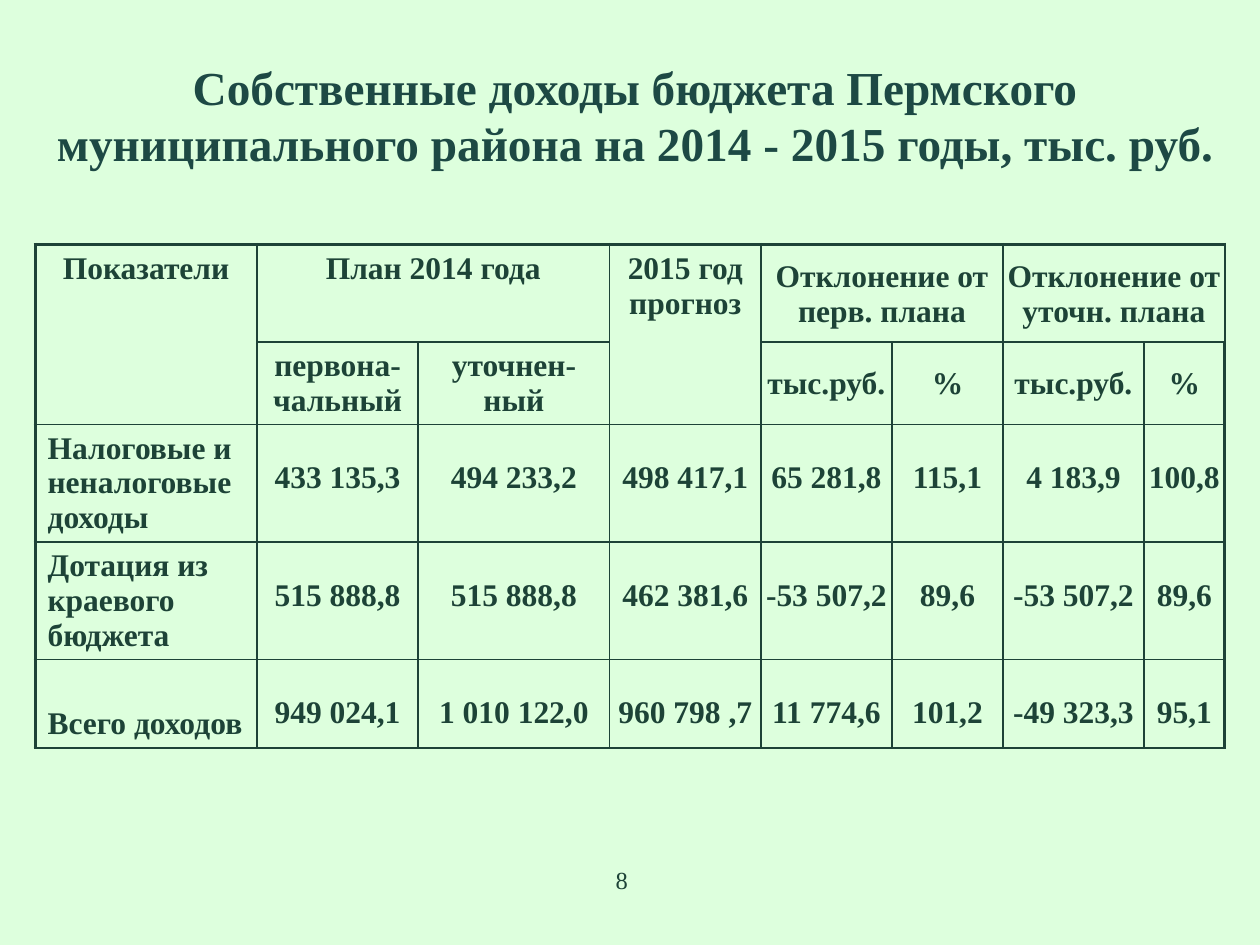
from lxml.etree import SubElement
from pptx import Presentation
from pptx.dml.color import RGBColor
from pptx.enum.text import MSO_ANCHOR, MSO_AUTO_SIZE, PP_ALIGN
from pptx.oxml.ns import qn
from pptx.util import Cm, Pt

theme = {
    "back": RGBColor.from_string("DDFFDD"),
    "line": "1D4337",
    "title": {"size": Pt(27), "bold": True, "color": "1D4944"},
    "cell": {"size": Pt(18), "bold": True, "color": "1D4337"},
    "page": {"size": Pt(14), "bold": False, "color": "1D4337"},
    "thin": Pt(1),
    "thick": Pt(2.25),
}


def write(frame, text, style, align=PP_ALIGN.CENTER):
    frame.text = text
    frame.word_wrap = True
    par = frame.paragraphs[0]
    par.alignment = align
    font = par.runs[0].font
    form = {"name": "Times New Roman", "size": style["size"], "bold": style["bold"]}
    for key, val in form.items():
        setattr(font, key, val)
    font.color.rgb = RGBColor.from_string(style["color"])


def edge(cell, side, width):
    line = SubElement(cell._tc.get_or_add_tcPr(), qn("a:ln" + side), w=str(width))
    fill = SubElement(line, qn("a:solidFill"))
    SubElement(fill, qn("a:srgbClr"), val=theme["line"])


deck = Presentation()
deck.slide_width, deck.slide_height = Cm(25.4), Cm(19.05)
slide = deck.slides.add_slide(deck.slide_layouts[5])
slide.background.fill.solid()
slide.background.fill.fore_color.rgb = theme["back"]

# Title
title = slide.shapes.title
place = {"left": Cm(0.5), "top": Cm(0.72), "width": Cm(24.6), "height": Cm(3.18)}
for key, val in place.items():
    setattr(title, key, val)
write(title.text_frame,
      "Собственные доходы бюджета Пермского муниципального района "
      "на 2014 - 2015 годы, тыс. руб.", theme["title"])
title.text_frame.vertical_anchor = MSO_ANCHOR.MIDDLE
title.text_frame.auto_size = MSO_AUTO_SIZE.NONE

# Table data: None marks a cell covered by a span
rows = [
    ["Показатели", "План 2014 года", None, "2015 год прогноз",
     "Отклонение от перв. плана", None, "Отклонение от уточн. плана", None],
    [None, "первона-чальный", "уточнен-ный", None, "тыс.руб.", "%", "тыс.руб.", "%"],
    ["Налоговые и неналоговые доходы", "433 135,3", "494 233,2", "498 417,1",
     "65 281,8", "115,1", "4 183,9", "100,8"],
    ["Дотация из краевого бюджета", "515 888,8", "515 888,8", "462 381,6",
     "-53 507,2", "89,6", "-53 507,2", "89,6"],
    ["Всего доходов", "949 024,1", "1 010 122,0", "960 798 ,7",
     "11 774,6", "101,2", "-49 323,3", "95,1"],
]
widths = [4.47, 3.25, 3.86, 3.05, 2.64, 2.24, 2.84, 1.63]
heights = [1.96, 1.66, 2.36, 2.36, 1.78]
last = len(widths) - 1

# Table grid
table = slide.shapes.add_table(len(rows), len(widths), Cm(0.71), Cm(4.93),
                               Cm(sum(widths)), Cm(sum(heights))).table
table.first_row = table.horz_banding = False
for col, size in zip(table.columns, widths):
    col.width = Cm(size)
for row, size in zip(table.rows, heights):
    row.height = Cm(size)
for top, left, low, right in [(0, 0, 1, 0), (0, 1, 0, 2), (0, 3, 1, 3),
                              (0, 4, 0, 5), (0, 6, 0, 7)]:
    table.cell(top, left).merge(table.cell(low, right))

# Cell formats
wide = {"margin_left": Cm(0.25), "margin_right": Cm(0.25),
        "margin_top": Cm(0.13), "margin_bottom": Cm(0.13),
        "vertical_anchor": MSO_ANCHOR.TOP}
tight = {"margin_left": Cm(0.03), "margin_right": Cm(0.03),
         "margin_top": Cm(0.03), "margin_bottom": 0,
         "vertical_anchor": MSO_ANCHOR.MIDDLE}
value = {**tight, "margin_top": Cm(0.73), "vertical_anchor": MSO_ANCHOR.TOP}
total = {**wide, "vertical_anchor": MSO_ANCHOR.BOTTOM}

# Cells
for r, row in enumerate(rows):
    for c, text in enumerate(row):
        cell = table.cell(r, c)
        for side, outer in (("L", c == 0), ("R", c == last), ("T", r == 0), ("B", False)):
            edge(cell, side, theme["thick"] if outer else theme["thin"])
        cell.fill.background()
        if text is None:
            continue
        if r < 2:
            form = wide if c < 4 else tight
        elif c:
            form = value
        else:
            form = total if r == len(rows) - 1 else wide
        for key, val in form.items():
            setattr(cell, key, val)
        label = r > 1 and c == 0
        write(cell.text_frame, text, theme["cell"],
              PP_ALIGN.LEFT if label else PP_ALIGN.CENTER)

# Page number
page = slide.shapes.add_textbox(Cm(8.51), Cm(17.32), Cm(8.05), Cm(1.32))
write(page.text_frame, "8", theme["page"])

deck.save("out.pptx")
